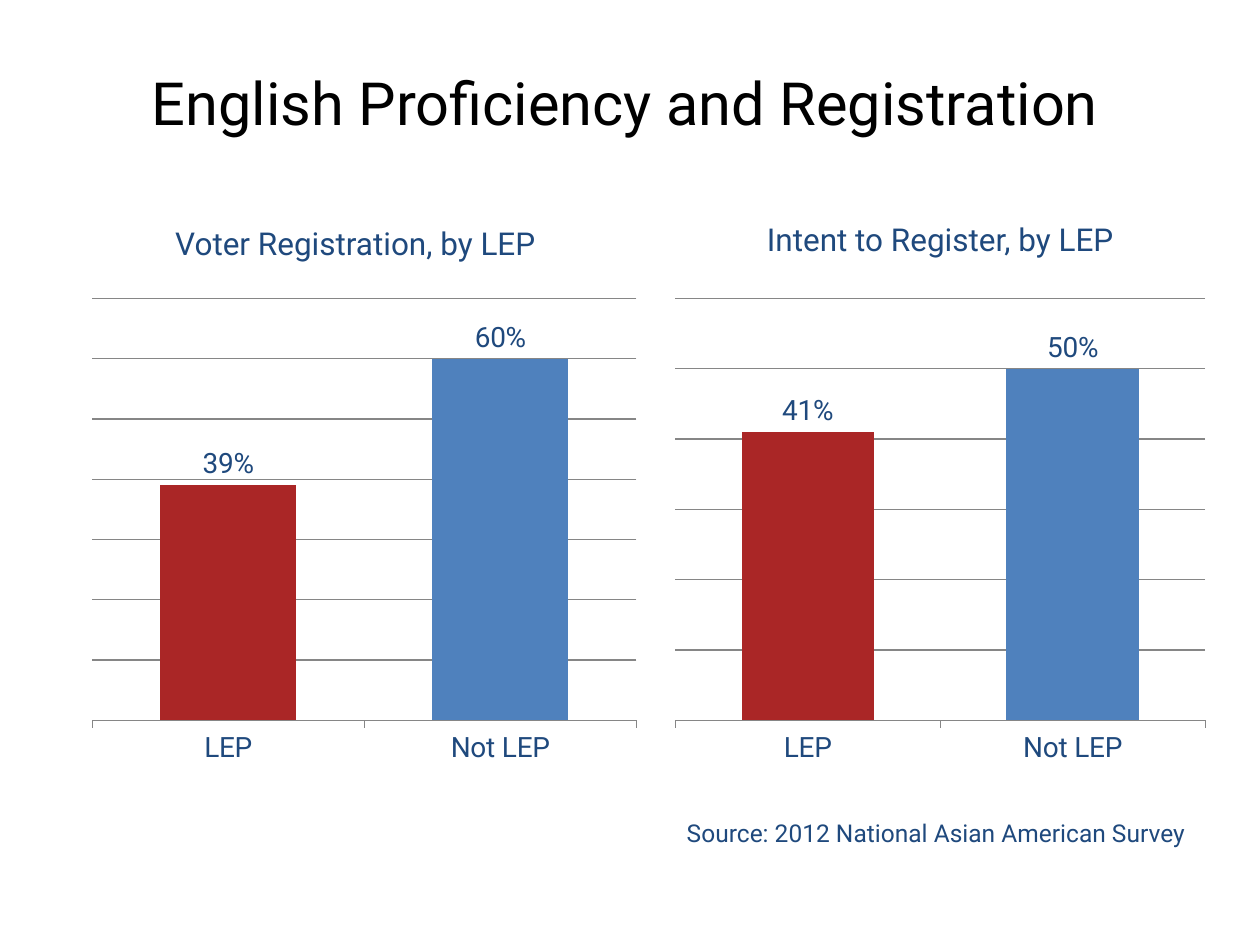
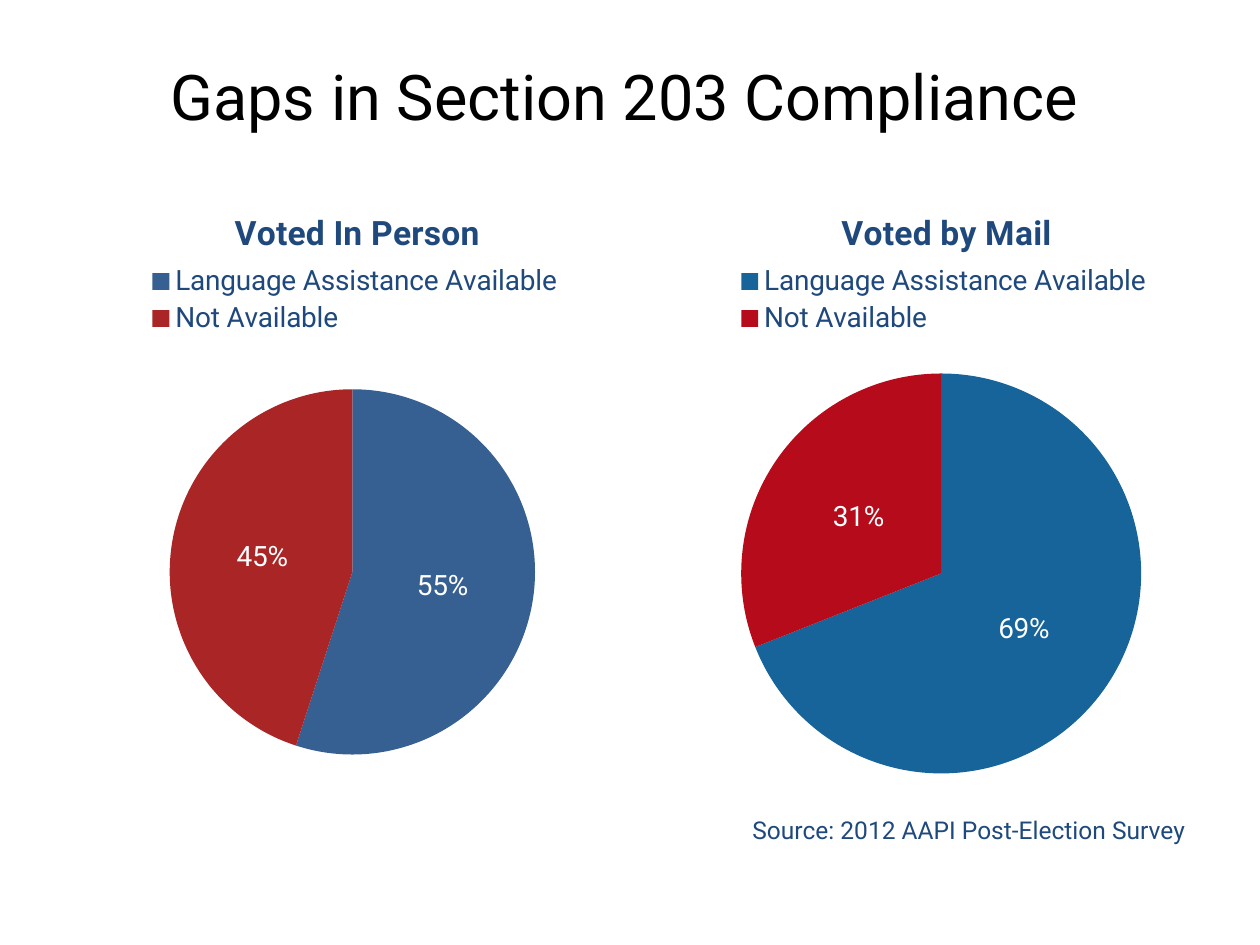
from lxml import etree
from pptx import Presentation
from pptx.chart.data import CategoryChartData
from pptx.dml.color import RGBColor
from pptx.enum.chart import XL_CHART_TYPE, XL_LABEL_POSITION, XL_LEGEND_POSITION, XL_TICK_LABEL_POSITION, XL_TICK_MARK
from pptx.enum.text import MSO_ANCHOR, PP_ALIGN
from pptx.oxml.ns import qn
from pptx.util import Cm, Pt

COLUMN, PIE = XL_CHART_TYPE.COLUMN_CLUSTERED, XL_CHART_TYPE.PIE
OUTSIDE_END, CENTER_LABEL = XL_LABEL_POSITION.OUTSIDE_END, XL_LABEL_POSITION.CENTER
LEGEND_TOP = XL_LEGEND_POSITION.TOP
NO_TICK_LABELS = XL_TICK_LABEL_POSITION.NONE
TICK_OUTSIDE, NO_TICK = XL_TICK_MARK.OUTSIDE, XL_TICK_MARK.NONE
CENTER, RIGHT = PP_ALIGN.CENTER, PP_ALIGN.RIGHT
MIDDLE, TOP = MSO_ANCHOR.MIDDLE, MSO_ANCHOR.TOP

FONT = "Roboto"
BLACK = RGBColor(0x00, 0x00, 0x00)
WHITE = RGBColor(0xFF, 0xFF, 0xFF)
NAVY = RGBColor(0x1F, 0x49, 0x7D)
BLUE = RGBColor(0x4F, 0x81, 0xBD)
STEEL = RGBColor(0x37, 0x60, 0x92)
OCEAN = RGBColor(0x16, 0x64, 0x9A)
BRICK = RGBColor(0xAA, 0x26, 0x26)
CRIMSON = RGBColor(0xB5, 0x0B, 0x1B)
GRID_GREY = RGBColor(0x86, 0x86, 0x86)


def style_font(font, size, color, bold=False):
    font.name, font.size, font.bold = FONT, Pt(size), bold
    font.color.rgb = color


def add_text(slide, box, text, size, color=NAVY, align=CENTER, anchor=TOP):
    frame = slide.shapes.add_textbox(*map(Cm, box)).text_frame
    frame.word_wrap = True
    frame.vertical_anchor = anchor
    paragraph = frame.paragraphs[0]
    paragraph.text = text
    paragraph.alignment = align
    style_font(paragraph.font, size, color)


def add_title(slide, box, text, size):
    add_text(slide, box, text, size, BLACK, anchor=MIDDLE)


def add_source(slide, top, text):
    add_text(slide, (2.18, top, 21.97, 0.86), text, 14, align=RIGHT)


def place_part(chart, part, **fractions):
    """Fix a chart part's place, in fractions of the chart area."""
    parent = chart.element.find(".//" + qn(part))
    for layout in parent.findall(qn("c:layout")):
        parent.remove(layout)
    leading = [child for child in parent if child.tag in (qn("c:tx"), qn("c:legendPos"))]
    layout = etree.Element(qn("c:layout"))
    parent.insert(len(leading), layout)
    manual = etree.SubElement(layout, qn("c:manualLayout"))
    if part == "c:plotArea":
        etree.SubElement(manual, qn("c:layoutTarget")).set("val", "inner")
    for axis in "xy":
        etree.SubElement(manual, qn(f"c:{axis}Mode")).set("val", "edge")
    for key, value in fractions.items():
        etree.SubElement(manual, qn(f"c:{key}")).set("val", str(value))


def add_share_chart(slide, kind, box, name, shares, colors, label_color, label_place):
    """Add a one-series percentage chart with one colour per category."""
    data = CategoryChartData(number_format="0%")
    data.categories = list(shares)
    data.add_series(name, list(shares.values()))
    chart = slide.shapes.add_chart(kind, *map(Cm, box), data).chart
    style_font(chart.font, 16, NAVY)
    chart.has_legend = False
    chart.has_title = False
    plot = chart.plots[0]
    plot.vary_by_categories = kind == PIE
    for index, color in enumerate(colors):
        fill = plot.series[0].points[index].format.fill
        fill.solid()
        fill.fore_color.rgb = color
    plot.has_data_labels = True
    labels = plot.data_labels
    labels.show_value = True
    labels.number_format, labels.number_format_is_linked = "0%", False
    labels.position = label_place
    style_font(labels.font, 16, label_color)
    return chart


def add_column_panel(slide, box, heading, heading_box, shares, top_share):
    chart = add_share_chart(slide, COLUMN, box, "Series 1", shares,
                            (BRICK, BLUE), NAVY, OUTSIDE_END)
    chart.plots[0].gap_width = 100
    place_part(chart, "c:plotArea", x=0.02, y=0.02, w=0.96, h=0.87)
    # Scale and gridlines
    scale = chart.value_axis
    scale.minimum_scale, scale.maximum_scale, scale.major_unit = 0, top_share, 0.1
    scale.tick_label_position = NO_TICK_LABELS
    scale.major_tick_mark = NO_TICK
    scale.format.line.fill.background()
    scale.visible = False
    scale.has_major_gridlines = True
    chart.category_axis.major_tick_mark = TICK_OUTSIDE
    for line in (scale.major_gridlines.format.line, chart.category_axis.format.line):
        line.color.rgb = GRID_GREY
        line.width = Pt(0.75)
    add_text(slide, heading_box, heading, 18)


def add_pie_panel(slide, box, heading, heading_x, shares, colors, pie):
    chart = add_share_chart(slide, PIE, box, heading, shares, colors, WHITE, CENTER_LABEL)
    # Heading and legend above the pie
    chart.has_title = True
    chart.chart_title.include_in_layout = False
    paragraph = chart.chart_title.text_frame.paragraphs[0]
    paragraph.text = heading
    style_font(paragraph.font, 19.2, NAVY, bold=True)
    chart.has_legend = True
    chart.legend.position = LEGEND_TOP
    chart.legend.include_in_layout = False
    style_font(chart.legend.font, 16, NAVY)
    place_part(chart, "c:title", x=heading_x, y=0.045)
    place_part(chart, "c:legend", x=0.095, y=0.135)
    place_part(chart, "c:plotArea", **pie)


def build_registration_slide(slide):
    add_title(slide, (1.27, 0.91, 22.66, 2.29), "English Proficiency and Registration", 34)
    panels = (
        ("Voter Registration, by LEP", 1.63, 11.43, (1.27, 4.39), (0.39, 0.6), 0.7),
        ("Intent to Register, by LEP", 13.39, 11.13, (13.06, 4.32), (0.41, 0.5), 0.6),
    )
    for heading, left, width, heading_corner, values, top_share in panels:
        add_column_panel(slide, (left, 5.82, width, 9.78), heading,
                         (*heading_corner, 11.79, 1.8),
                         dict(zip(("LEP", "Not LEP"), values)), top_share)
    add_source(slide, 16.36, "Source: 2012 National Asian American Survey")


def build_compliance_slide(slide):
    add_title(slide, (0.74, 0.33, 23.7, 3.2), "Gaps in Section 203 Compliance", 36)
    answers = ("Language Assistance Available", "Not Available")
    panels = (
        ("Voted In Person", 1.9, 0.26, (0.55, 0.45), (STEEL, BRICK),
         dict(x=0.145, y=0.34, w=0.71, h=0.58)),
        ("Voted by Mail", 13.77, 0.295, (0.69, 0.31), (OCEAN, CRIMSON),
         dict(x=0.11, y=0.315, w=0.78, h=0.635)),
    )
    for heading, left, heading_x, values, colors, pie in panels:
        add_pie_panel(slide, (left, 3.53, 10.41, 12.7), heading, heading_x,
                      dict(zip(answers, values)), colors, pie)
    add_source(slide, 16.31, "Source: 2012 AAPI Post-Election Survey")


def main():
    deck = Presentation()
    deck.slide_width, deck.slide_height = Cm(25.4), Cm(19.05)
    blank = deck.slide_layouts[6]
    for build in (build_registration_slide, build_compliance_slide):
        build(deck.slides.add_slide(blank))
    deck.save("out.pptx")


if __name__ == "__main__":
    main()
